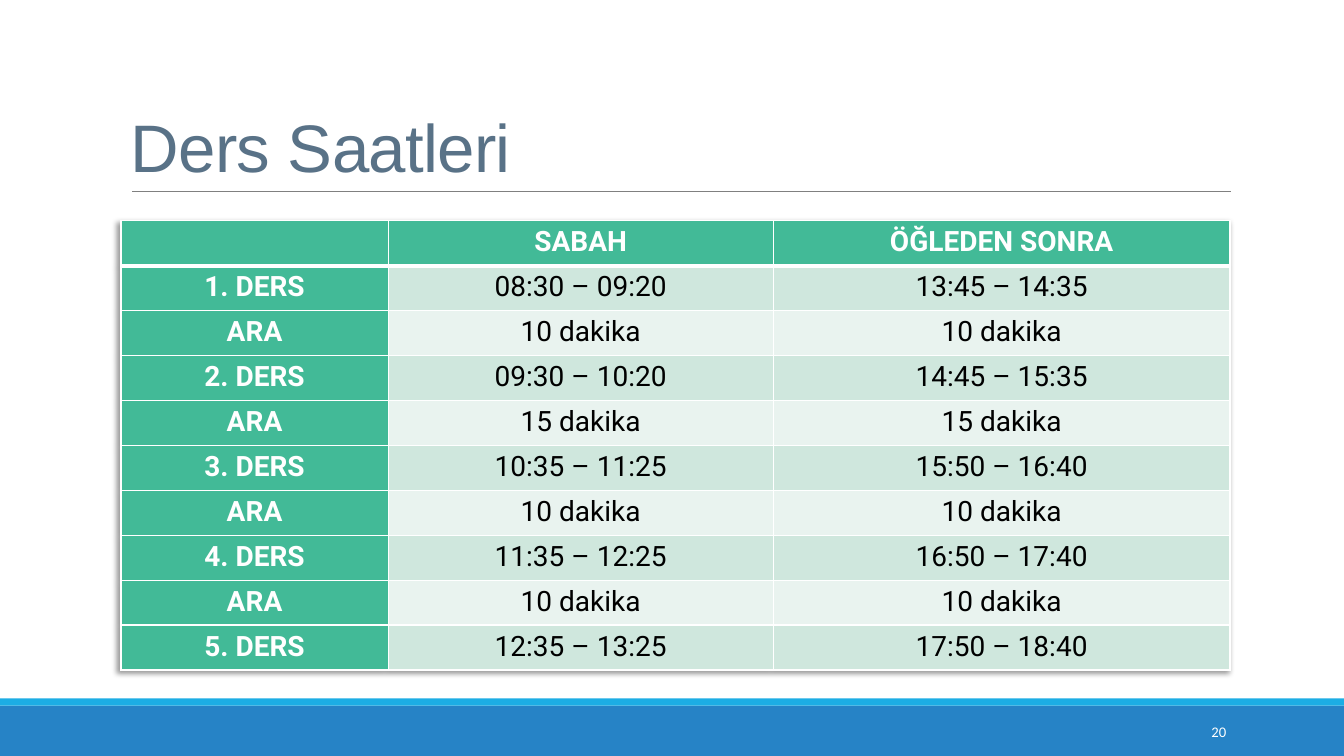
import pptx
import pptx.dml.color
import pptx.enum.shapes
import pptx.enum.text
import pptx.oxml
import pptx.oxml.ns
import pptx.util
from pptx.util import Inches

COLORS = {
    "white": "FFFFFF", "black": "000000", "title": "597287", "rule": "808080",
    "footer": "2683C6", "stripe": "1CADE4", "green": "42BA97",
    "lesson": "CFE7DD", "break": "E9F3EF",
}
NAMESPACE = pptx.oxml.ns.nsdecls("a")
ALIGN = pptx.enum.text.PP_ALIGN
ANCHOR = pptx.enum.text.MSO_ANCHOR


def rgb(name):
    return pptx.dml.color.RGBColor.from_string(COLORS[name])


def write(paragraph, text, font_name, size, color, align, bold=False):
    paragraph.text = text
    paragraph.alignment = align
    paragraph.font.name = font_name
    paragraph.font.size = pptx.util.Pt(size)
    paragraph.font.bold = bold
    paragraph.font.color.rgb = rgb(color)


presentation = pptx.Presentation()
presentation.slide_width = Inches(13.33)
presentation.slide_height = Inches(7.5)
slide = presentation.slides.add_slide(presentation.slide_layouts[6])

# Footer bars
for top, height, color in [(7, 0.5, "footer"), (6.93, 0.07, "stripe")]:
    bar = slide.shapes.add_shape(
        pptx.enum.shapes.MSO_SHAPE.RECTANGLE,
        0, Inches(top), presentation.slide_width, Inches(height))
    bar.shadow.inherit = False
    bar.fill.solid()
    bar.fill.fore_color.rgb = rgb(color)
    bar.line.fill.background()

# Title rule
rule = slide.shapes.add_connector(
    pptx.enum.shapes.MSO_CONNECTOR.STRAIGHT,
    Inches(1.31), Inches(1.9), Inches(12.21), Inches(1.9))
rule.line.color.rgb = rgb("rule")
rule.line.width = pptx.util.Pt(0.5)
rule._element.spPr.append(pptx.oxml.parse_xml(f"<a:effectLst {NAMESPACE}/>"))

# Title and slide number
labels = [
    (1.2, 0.31, 11, 1.59, ANCHOR.BOTTOM,
     ("Ders Saatleri", "Arial", 48, "title", ALIGN.LEFT)),
    (10.83, 7.06, 1.43, 0.4, ANCHOR.MIDDLE,
     ("20", "Calibri", 10.5, "white", ALIGN.RIGHT)),
]
for left, top, width, height, anchor, content in labels:
    box = slide.shapes.add_textbox(
        Inches(left), Inches(top), Inches(width), Inches(height))
    box.text_frame.word_wrap = True
    box.text_frame.vertical_anchor = anchor
    paragraph = box.text_frame.paragraphs[0]
    write(paragraph, *content)
    if anchor == ANCHOR.BOTTOM:
        paragraph.line_spacing = 0.85
        paragraph.runs[0]._r.get_or_add_rPr().set("spc", "-50")

# Timetable
timetable = [
    ("", "SABAH", "ÖĞLEDEN SONRA"),
    ("1. DERS", "08:30 – 09:20", "13:45 – 14:35"),
    ("ARA", "10 dakika", "10 dakika"),
    ("2. DERS", "09:30 – 10:20", "14:45 – 15:35"),
    ("ARA", "15 dakika", "15 dakika"),
    ("3. DERS", "10:35 – 11:25", "15:50 – 16:40"),
    ("ARA", "10 dakika", "10 dakika"),
    ("4. DERS", "11:35 – 12:25", "16:50 – 17:40"),
    ("ARA", "10 dakika", "10 dakika"),
    ("5. DERS", "12:35 – 13:25", "17:50 – 18:40"),
]
table = slide.shapes.add_table(
    len(timetable), 3, Inches(1.2), Inches(2.19), Inches(11), Inches(4.46)).table
table.horz_banding = False
for column, width in zip(table.columns, [2.65, 3.82, 4.53]):
    column.width = Inches(width)

table_shadow = pptx.oxml.parse_xml(
    f'<a:effectLst {NAMESPACE}><a:outerShdw blurRad="50800" dist="38100" dir="8100000">'
    f'<a:srgbClr val="{COLORS["black"]}"><a:alpha val="40000"/></a:srgbClr>'
    '</a:outerShdw></a:effectLst>')
table._tbl.tblPr.insert(0, table_shadow)

for row_index, texts in enumerate(timetable):
    for column_index, text in enumerate(texts):
        cell = table.cell(row_index, column_index)
        heading = row_index == 0 or column_index == 0
        band = "lesson" if row_index % 2 else "break"
        cell.margin_left = cell.margin_right = Inches(0.07)
        cell.margin_top = cell.margin_bottom = 0
        cell.fill.solid()
        cell.fill.fore_color.rgb = rgb("green" if heading else band)
        paragraph = cell.text_frame.paragraphs[0]
        write(paragraph, text, "Roboto", 20, "white" if heading else "black",
              ALIGN.CENTER, heading)
        paragraph.line_spacing = 1.15

        # The edge below the header row is thicker
        thick_side = {0: "B", 1: "T"}.get(row_index)
        for position, side in enumerate("LRTB"):
            points = 3 if side == thick_side else 1
            border = pptx.oxml.parse_xml(
                f'<a:ln{side} {NAMESPACE} w="{pptx.util.Pt(points)}"><a:solidFill>'
                f'<a:srgbClr val="{COLORS["white"]}"/></a:solidFill></a:ln{side}>')
            cell._tc.get_or_add_tcPr().insert(position, border)

presentation.save("out.pptx")
